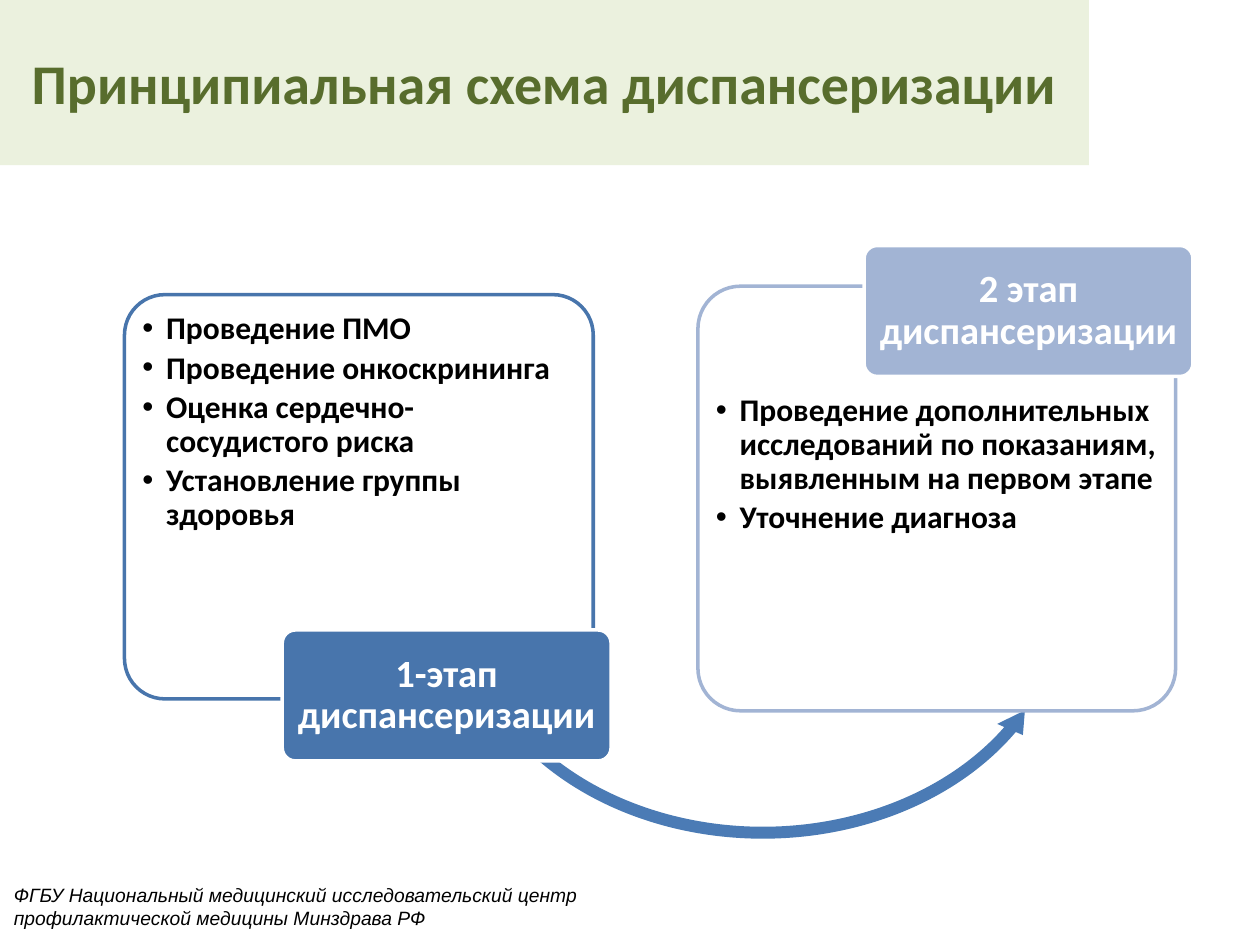
import pptx
import pptx.dml.color
import pptx.enum.dml
import pptx.enum.shapes
import pptx.enum.text
import pptx.oxml
import pptx.oxml.ns
import pptx.util

Cm = pptx.util.Cm
Pt = pptx.util.Pt
RGBColor = pptx.dml.color.RGBColor
Shape = pptx.enum.shapes.MSO_SHAPE
Align = pptx.enum.text.PP_ALIGN
Anchor = pptx.enum.text.MSO_ANCHOR

BLACK = RGBColor(0x00, 0x00, 0x00)
WHITE = RGBColor(0xFF, 0xFF, 0xFF)
PALE_GREEN = RGBColor(0xEB, 0xF1, 0xDE)
DARK_GREEN = RGBColor(0x58, 0x6D, 0x2D)
BLUE = RGBColor(0x48, 0x75, 0xAC)
LIGHT_BLUE = RGBColor(0xA2, 0xB4, 0xD4)
ARROW_BLUE = RGBColor(0x4B, 0x7B, 0xB5)

TITLE = "Принципиальная схема диспансеризации"
FOOTER = ("ФГБУ Национальный медицинский исследовательский центр "
          "профилактической медицины Минздрава РФ")
STAGES = [
    {
        "label": "1-этап диспансеризации",
        "items": ["Проведение ПМО", "Проведение онкоскрининга",
                  "Оценка сердечно-сосудистого риска",
                  "Установление группы здоровья"],
        "color": BLUE,
        "frame": (2.51, 5.94, 9.45, 8.15),
        "list": (2.51, 5.94, 9.45, 6.4),
        "label_at": (5.69, 12.7),
    },
    {
        "label": "2 этап диспансеризации",
        "items": ["Проведение дополнительных исследований по показаниям, "
                  "выявленным на первом этапе", "Уточнение диагноза"],
        "color": LIGHT_BLUE,
        "frame": (14.07, 5.77, 9.63, 8.56),
        "list": (14.07, 7.59, 9.63, 6.73),
        "label_at": (17.42, 4.95),
    },
]
LABEL_SIZE = (6.63, 2.64)
ARROW = (9.07, 6.99, 12.62, 10.08)
ARROW_BENDS = (0.024, 2.881, 16.949, 86.558, 0.028)
BULLET_INDENT = Cm(0.48)


def place(box, area):
    box.left, box.top, box.width, box.height = [Cm(value) for value in area]


def set_frame(box, side, top, anchor):
    frame = box.text_frame
    frame.word_wrap = True
    frame.auto_size = pptx.enum.text.MSO_AUTO_SIZE.NONE
    frame.margin_left = frame.margin_right = Cm(side)
    frame.margin_top = frame.margin_bottom = Cm(top)
    frame.vertical_anchor = anchor
    return frame


def write(para, text, size, color, font="Calibri", bold=True, italic=False):
    span = para.add_run()
    span.text = text
    span.font.name = font
    span.font.size = Pt(size)
    span.font.bold = bold
    span.font.italic = italic
    span.font.color.rgb = color


def add_shape(page, kind, area, fill, line=None):
    box = page.shapes.add_shape(kind, *[Cm(value) for value in area])
    box.shadow.inherit = False
    box.fill.solid()
    box.fill.fore_color.rgb = fill
    if line is None:
        box.line.fill.background()
    else:
        box.line.color.rgb = line
        box.line.width = Pt(2)
    return box


def add_panel(page, stage):
    panel = add_shape(page, Shape.ROUNDED_RECTANGLE, stage["frame"], WHITE, stage["color"])
    panel.adjustments[0] = 0.1
    color = panel.fill._xPr.find(".//" + pptx.oxml.ns.qn("a:srgbClr"))
    alpha = pptx.oxml.parse_xml(f'<a:alpha {pptx.oxml.ns.nsdecls("a")} val="90000"/>')
    color.append(alpha)


def fill_list(page, box, stage):
    page.shapes._spTree.append(box._element)
    place(box, stage["list"])
    frame = set_frame(box, 0.36, 0.36, Anchor.TOP)
    for index, item in enumerate(stage["items"]):
        para = frame.paragraphs[0] if index == 0 else frame.add_paragraph()
        props = para._p.get_or_add_pPr()
        props.set("marL", str(BULLET_INDENT))
        props.set("indent", str(-BULLET_INDENT))
        props.append(pptx.oxml.parse_xml(
            f'<a:buChar {pptx.oxml.ns.nsdecls("a")} char="•"/>'))
        para.alignment = Align.LEFT
        para.line_spacing = 0.9
        para.space_before = Pt(0)
        para.space_after = Pt(3)
        write(para, item, 18, BLACK)


def add_label(page, stage):
    label = add_shape(page, Shape.ROUNDED_RECTANGLE, stage["label_at"] + LABEL_SIZE,
                      stage["color"], WHITE)
    label.adjustments[0] = 0.1
    para = set_frame(label, 0.13, 0.08, Anchor.MIDDLE).paragraphs[0]
    para.alignment = Align.CENTER
    para.line_spacing = 0.9
    write(para, stage["label"], 22, WHITE)


def add_arrow(page):
    arrow = add_shape(page, Shape.LEFT_CIRCULAR_ARROW, ARROW, ARROW_BLUE)
    for index, bend in enumerate(ARROW_BENDS):
        arrow.adjustments[index] = bend


def add_title(page):
    title = page.shapes.title
    place(title, (0, 0, 21.95, 3.33))
    title.fill.solid()
    title.fill.fore_color.rgb = PALE_GREEN
    para = set_frame(title, 0.25, 0.13, Anchor.MIDDLE).paragraphs[0]
    para.alignment = Align.CENTER
    write(para, TITLE, 32, DARK_GREEN)


def add_footer(page):
    area = [Cm(value) for value in (0.03, 17.68, 12.42, 1.19)]
    footer = page.shapes.add_textbox(*area)
    para = set_frame(footer, 0.25, 0.13, Anchor.TOP).paragraphs[0]
    write(para, FOOTER, 11, BLACK, font="Arial", bold=False, italic=True)


def main():
    deck = pptx.Presentation()
    deck.slide_width, deck.slide_height = Cm(25.4), Cm(19.05)
    page = deck.slides.add_slide(deck.slide_layouts.get_by_name("Two Content"))
    bodies = [page.placeholders[1], page.placeholders[2]]

    add_footer(page)
    add_title(page)
    for number, (stage, body) in enumerate(zip(STAGES, bodies)):
        add_panel(page, stage)
        fill_list(page, body, stage)
        if number == 0:
            add_arrow(page)
        add_label(page, stage)
    deck.save("out.pptx")


if __name__ == "__main__":
    main()
